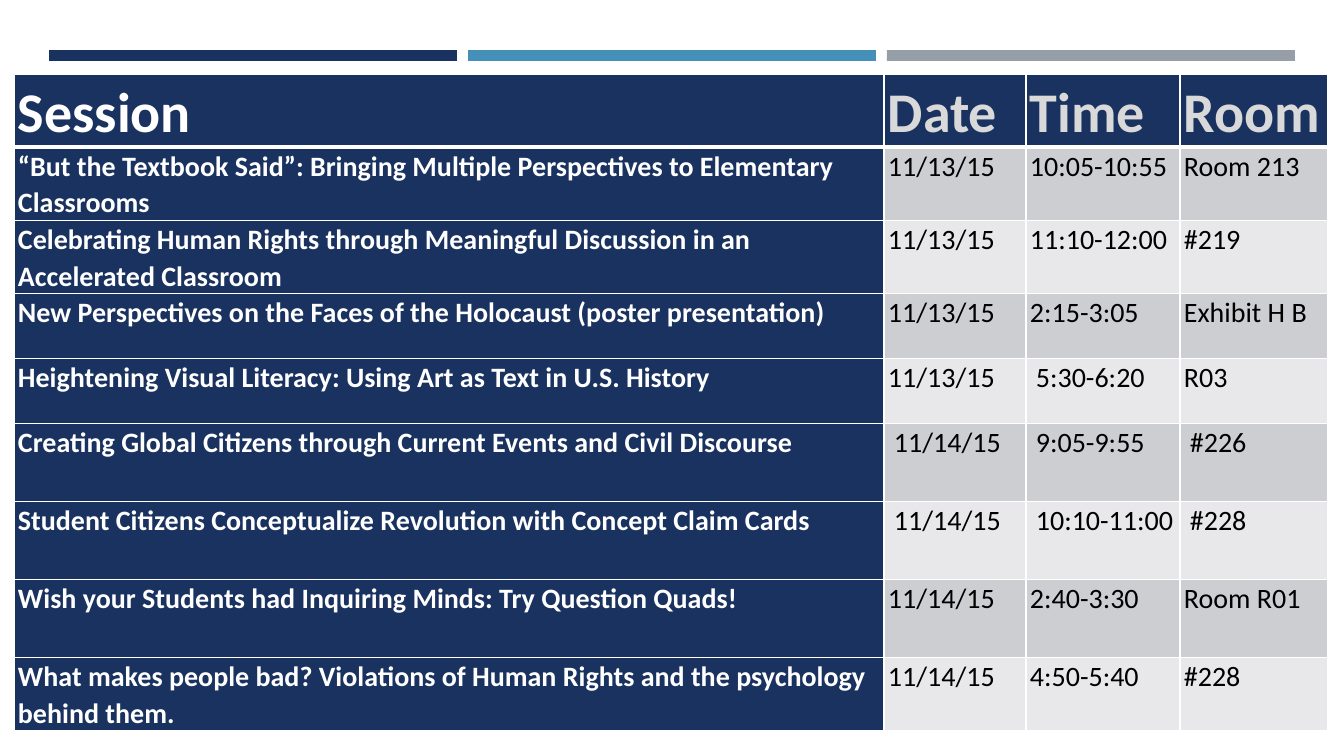
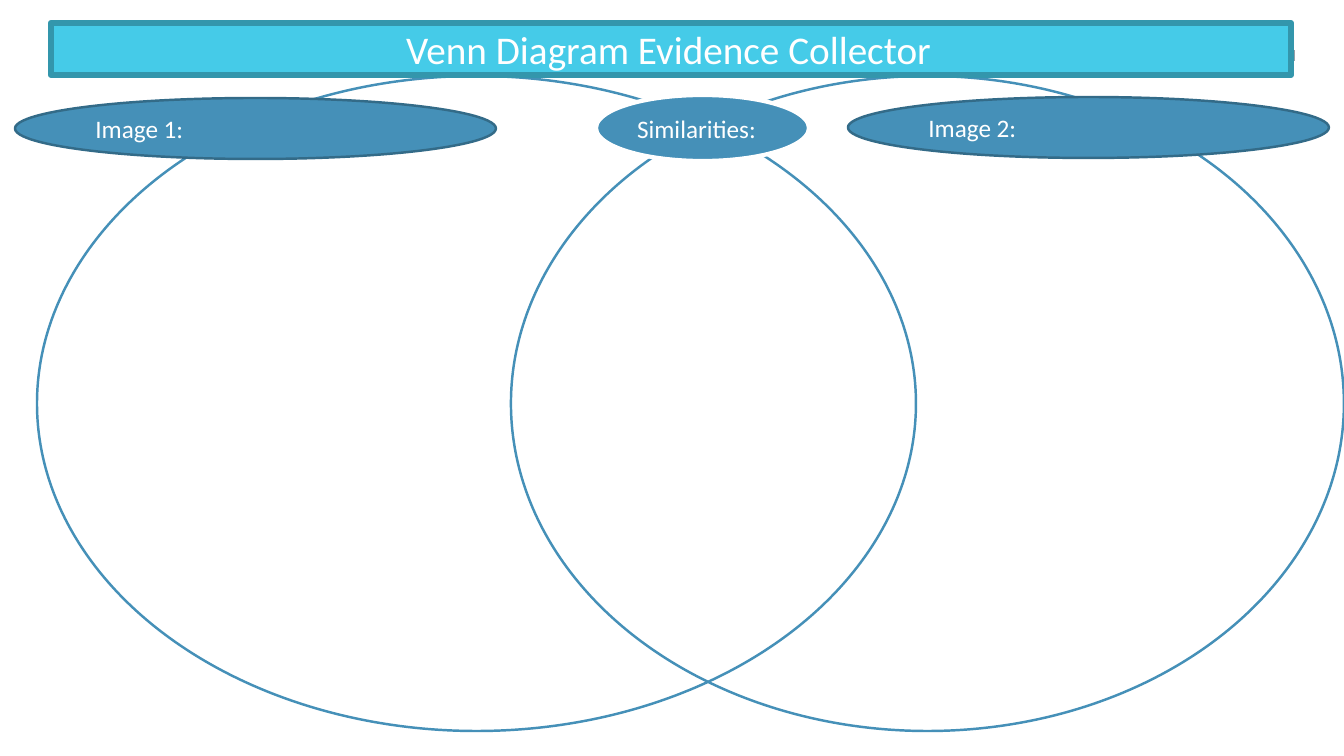
from lxml.etree import SubElement
from pptx import Presentation
from pptx.dml.color import RGBColor
from pptx.enum.shapes import MSO_SHAPE
from pptx.enum.text import MSO_ANCHOR, MSO_AUTO_SIZE, PP_ALIGN
from pptx.oxml.ns import qn
from pptx.util import Pt

EMU_PER_PX = 914400 / 100.8
COLORS = {
    "navy": "1A3260",
    "blue": "4590B8",
    "gray": "969FA7",
    "cyan": "45CBE8",
    "cyan_edge": "3396AC",
    "blue_edge": "336B88",
    "white": "FFFFFF",
    "black": "000000",
    "header_text": "D9D9D9",
    "row_dark": "CDCED2",
    "row_light": "E8E8EA",
}
FONT = "Calibri"
TITLE_ONLY, BLANK = 5, 6

SESSIONS = [
    ("Session", "Date", "Time", "Room"),
    ("“But the Textbook Said”: Bringing Multiple Perspectives to Elementary Classrooms",
     "11/13/15", "10:05-10:55", "Room 213"),
    ("Celebrating Human Rights through Meaningful Discussion in an Accelerated Classroom",
     "11/13/15", "11:10-12:00", "#219"),
    ("New Perspectives on the Faces of the Holocaust (poster presentation)",
     "11/13/15", "2:15-3:05", "Exhibit H B"),
    ("Heightening Visual Literacy: Using Art as Text in U.S. History",
     "11/13/15", "5:30-6:20", "R03"),
    ("Creating Global Citizens through Current Events and Civil Discourse",
     "11/14/15", "9:05-9:55", "#226"),
    ("Student Citizens Conceptualize Revolution with Concept Claim Cards",
     "11/14/15", "10:10-11:00", "#228"),
    ("Wish your Students had Inquiring Minds: Try Question Quads!",
     "11/14/15", "2:40-3:30", "Room R01"),
    ("What makes people bad? Violations of Human Rights and the psychology behind them.",
     "11/14/15", "4:50-5:40", "#228"),
]
COLUMN_WIDTHS = [870, 142, 154, 148]
ROW_HEIGHTS = [73, 73, 73, 65, 65, 78, 78, 78, 73]
INDENTED_CELLS = {(4, 2)} | {(row, column) for row in (5, 6) for column in (1, 2, 3)}


def px(length):
    return round(length * EMU_PER_PX)


def color(name):
    return RGBColor.from_string(COLORS[name])


class Deck:
    def __init__(self):
        self.presentation = Presentation()
        self.presentation.slide_width = px(1344)
        self.presentation.slide_height = px(756)
        self.slide = None

    def add_slide(self, layout):
        self.slide = self.presentation.slides.add_slide(self.presentation.slide_layouts[layout])

    def add_master_bands(self):
        master = self.presentation.slide_master
        for index, name in enumerate(("navy", "blue", "gray")):
            band = self.add_shape(MSO_SHAPE.RECTANGLE, (49 + index * 419, 50, 408, 11), name)
            master.shapes.element.append(band.element)

    def format_shape(self, shape, fill=None, line=None, width=1.75):
        if fill:
            shape.fill.solid()
            shape.fill.fore_color.rgb = color(fill)
        else:
            shape.fill.background()
        if line:
            shape.line.color.rgb = color(line)
            shape.line.width = Pt(width)
        else:
            shape.line.fill.background()

    def format_paragraph(self, paragraph, size, name, bold=False, align=PP_ALIGN.LEFT):
        paragraph.alignment = align
        paragraph.font.name = FONT
        paragraph.font.size = Pt(size)
        paragraph.font.bold = bold
        paragraph.font.color.rgb = color(name)

    def set_text(self, shape, text, size, align, margins):
        frame = shape.text_frame
        frame.text = text
        frame.word_wrap = True
        frame.auto_size = MSO_AUTO_SIZE.NONE
        frame.vertical_anchor = MSO_ANCHOR.MIDDLE
        frame.margin_left, frame.margin_right = map(px, margins)
        frame.margin_top = frame.margin_bottom = px(5)
        self.format_paragraph(frame.paragraphs[0], size, "white", align=align)

    def add_shape(self, kind, box, fill=None, line=None, width=1.75):
        shape = self.slide.shapes.add_shape(kind, *map(px, box))
        shape.shadow.inherit = False
        self.format_shape(shape, fill, line, width)
        return shape

    def add_circle(self, box, fill=None):
        self.add_shape(MSO_SHAPE.OVAL, box, fill, "blue")

    def add_label(self, text, box, line="blue_edge", width=1.75, align=PP_ALIGN.LEFT,
                  margins=(10, 10)):
        label = self.add_shape(MSO_SHAPE.OVAL, box, "blue", line, width)
        self.set_text(label, text, 18, align, margins)

    def add_title(self, text, box):
        title = self.slide.shapes.title
        title.left, title.top, title.width, title.height = map(px, box)
        self.format_shape(title, "cyan", "cyan_edge", 4.5)
        self.set_text(title, text, 28, PP_ALIGN.CENTER, (10, 15))
        self.slide.shapes.element.append(title.element)

    def set_borders(self, cell, top, bottom):
        properties = cell._tc.get_or_add_tcPr()
        for side, width in (("L", 1), ("R", 1), ("T", top), ("B", bottom)):
            border = SubElement(properties, qn(f"a:ln{side}"), w=str(Pt(width)))
            fill = SubElement(border, qn("a:solidFill"))
            SubElement(fill, qn("a:srgbClr"), val=COLORS["white"])

    def format_cell(self, cell, text, row, column):
        header, first = row == 0, column == 0
        cell.text = text
        cell.margin_left = px(10 if (row, column) in INDENTED_CELLS else 4)
        cell.margin_right = px(3)
        cell.margin_top = cell.margin_bottom = 0
        self.set_borders(cell, 3 if row == 1 else 1, 3 if header else 1)
        if header or first:
            fill, text_color = "navy", "white" if first else "header_text"
        else:
            fill, text_color = "row_dark" if row % 2 else "row_light", "black"
        cell.fill.solid()
        cell.fill.fore_color.rgb = color(fill)
        paragraph = cell.text_frame.paragraphs[0]
        paragraph.line_spacing = 1.07
        self.format_paragraph(paragraph, 40 if header else 20, text_color, header or first)

    def add_table(self, rows, left, top, widths, heights):
        box = map(px, (left, top, sum(widths), sum(heights)))
        table = self.slide.shapes.add_table(len(rows), len(widths), *box).table
        table.horz_banding = False
        for column, width in zip(table.columns, widths):
            column.width = px(width)
        for row, height in zip(table.rows, heights):
            row.height = px(height)
        for row, texts in enumerate(rows):
            for column, text in enumerate(texts):
                self.format_cell(table.cell(row, column), text, row, column)


def main():
    deck = Deck()
    deck.add_slide(BLANK)
    deck.add_master_bands()
    deck.add_table(SESSIONS, 14, 74, COLUMN_WIDTHS, ROW_HEIGHTS)

    deck.add_slide(TITLE_ONLY)
    deck.add_circle((511, 76, 833, 655), "white")
    deck.add_circle((37, 76, 879, 655))
    deck.add_title("Venn Diagram Evidence Collector", (51, 23, 1240, 52))
    deck.add_label("Image 1:", (15, 98, 481, 61))
    deck.add_label("Image 2:", (848, 97, 481, 61))
    deck.add_label("Similarities:", (596, 95, 213, 66), "white", 3, PP_ALIGN.CENTER, (0, 12))
    deck.presentation.save("out.pptx")


if __name__ == "__main__":
    main()
